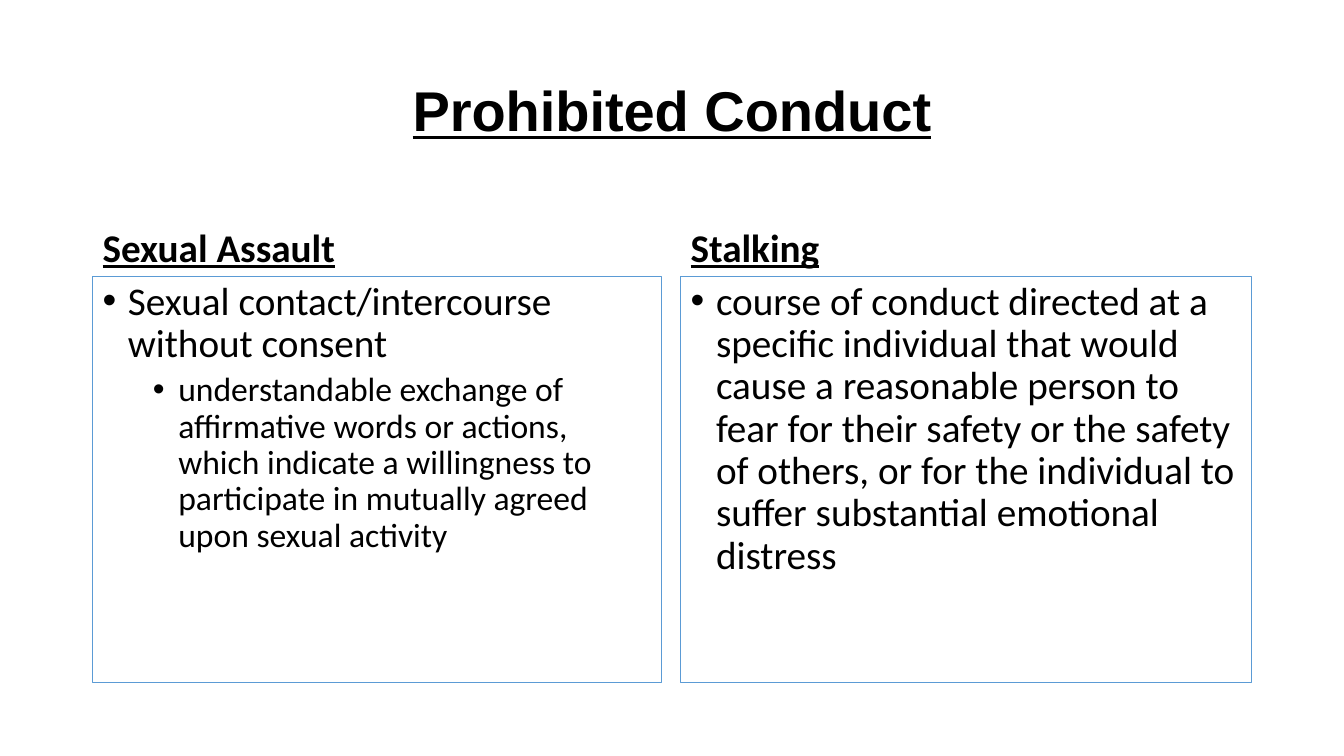
import pptx
import pptx.util
import pptx.dml.color
import pptx.enum.text
import lxml.etree
from pptx.util import Cm, Pt
from pptx.oxml.ns import qn

BLACK = pptx.dml.color.RGBColor(0x00, 0x00, 0x00)
BLUE = pptx.dml.color.RGBColor(0x5B, 0x9B, 0xD5)
ANCHOR = pptx.enum.text.MSO_ANCHOR
ALIGN = pptx.enum.text.PP_ALIGN


def place(shape, left, top, width, height, anchor):
    shape.left, shape.top = Cm(left), Cm(top)
    shape.width, shape.height = Cm(width), Cm(height)
    shape.text_frame.word_wrap = True
    shape.text_frame.auto_size = pptx.enum.text.MSO_AUTO_SIZE.NONE
    shape.text_frame.vertical_anchor = anchor


def format_paragraph(paragraph, size, alignment=ALIGN.LEFT, font="Calibri", heading=False, before=0):
    paragraph.alignment = alignment
    paragraph.line_spacing = 0.9
    paragraph.space_before = Pt(before)
    for run in paragraph.runs:
        run.font.name = font
        run.font.size = Pt(size)
        run.font.bold = heading
        run.font.underline = heading
        run.font.color.rgb = BLACK


presentation = pptx.Presentation()
presentation.slide_width = Cm(33.87)
presentation.slide_height = Cm(19.05)
slide = presentation.slides.add_slide(presentation.slide_layouts.get_by_name("Comparison"))

# Title
title = slide.shapes.title
place(title, 2.33, 1.01, 29.21, 3.68, ANCHOR.MIDDLE)
title.text_frame.text = "Prohibited Conduct"
format_paragraph(title.text_frame.paragraphs[0], 40, ALIGN.CENTER, "Arial", heading=True)

# Columns: heading, left, width, heading and list placeholders, list of (level, text)
columns = [
    ("Sexual Assault", 2.33, 14.33, 1, 2, [
        (0, "Sexual contact/intercourse without consent"),
        (1, "understandable exchange of affirmative words or actions, which indicate "
            "a willingness to participate in mutually agreed upon sexual activity"),
    ]),
    ("Stalking", 17.15, 14.4, 3, 4, [
        (0, "course of conduct directed at a specific individual that would cause a "
            "reasonable person to fear for their safety or the safety of others, or for "
            "the individual to suffer substantial emotional distress"),
    ]),
]
placeholders = {shape.placeholder_format.idx: shape for shape in slide.placeholders}

for heading_text, left, width, heading_index, list_index, items in columns:
    # Column heading
    heading = placeholders[heading_index]
    place(heading, left, 4.67, width, 2.29, ANCHOR.BOTTOM)
    heading.text_frame.text = heading_text
    format_paragraph(heading.text_frame.paragraphs[0], 28, heading=True)

    # Outlined bullet list
    box = placeholders[list_index]
    place(box, left, 6.96, width, 10.24, ANCHOR.TOP)
    box.line.color.rgb = BLUE
    box.line.width = Pt(0.75)
    box.text_frame.text = "\n".join(text for level, text in items)
    for paragraph, (level, text) in zip(box.text_frame.paragraphs, items):
        paragraph.level = level
        properties = paragraph._p.get_or_add_pPr()
        properties.set("marL", str(Cm(0.64 + 1.27 * level)))
        properties.set("indent", str(Cm(-0.64)))
        lxml.etree.SubElement(properties, qn("a:buFont"), typeface="Arial")
        lxml.etree.SubElement(properties, qn("a:buChar"), char="•")
        format_paragraph(paragraph, 28 - 4 * level, before=5 * level)

presentation.save("out.pptx")
